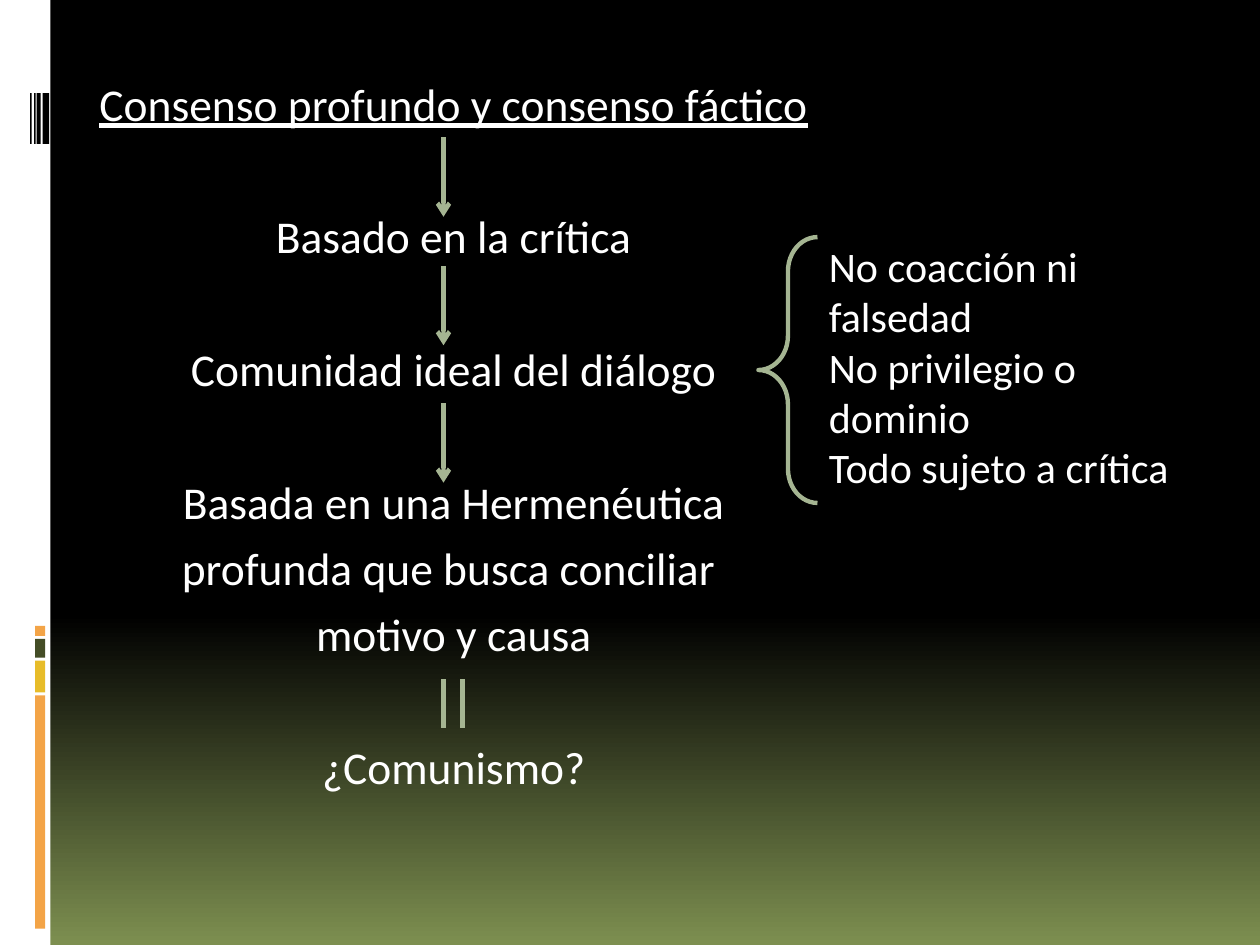
from lxml import etree
from pptx import Presentation
from pptx.dml.color import RGBColor
from pptx.enum.shapes import MSO_CONNECTOR, MSO_SHAPE
from pptx.enum.text import MSO_AUTO_SIZE, PP_ALIGN
from pptx.oxml.ns import qn
from pptx.util import Cm, Pt

RECT = MSO_SHAPE.RECTANGLE
BRACE = MSO_SHAPE.LEFT_BRACE
LINE = MSO_CONNECTOR.STRAIGHT
CENTER = PP_ALIGN.CENTER
LEFT = PP_ALIGN.LEFT
FIT = MSO_AUTO_SIZE.SHAPE_TO_FIT_TEXT
FIXED = MSO_AUTO_SIZE.NONE

HUES = {
    "white": "FFFFFF",
    "black": "000000",
    "olive": "7D8F50",
    "sage": "A5B592",
    "orange": "F3A447",
    "gold": "E7BC29",
    "moss": "444D26",
}


class Deck:
    font = "Calibri"
    width = Pt(2.5)

    def __init__(self):
        self.show = Presentation()
        self.show.slide_width, self.show.slide_height = Cm(25.4), Cm(19.05)
        self.slide = self.show.slides.add_slide(self.show.slide_layouts[6])

    def hue(self, name):
        return RGBColor.from_string(HUES[name])

    def fade(self, start, first, last):
        fill = self.slide.background.fill
        fill.gradient()
        fill.gradient_angle = 270
        for stop, place, name in zip(fill.gradient_stops, (start, 1), (first, last)):
            stop.position = place
            stop.color.rgb = self.hue(name)

    def bar(self, x, y, w, h, name):
        bar = self.slide.shapes.add_shape(RECT, Cm(x), Cm(y), Cm(w), Cm(h))
        bar.shadow.inherit = False
        bar.fill.solid()
        bar.fill.fore_color.rgb = self.hue(name)
        bar.line.fill.background()

    def brace(self, x, y, w, h, curve):
        brace = self.slide.shapes.add_shape(BRACE, Cm(x), Cm(y), Cm(w), Cm(h))
        brace.shadow.inherit = False
        brace.adjustments[0] = curve
        brace.fill.background()
        self.ink(brace.line)

    def ink(self, line):
        line.color.rgb = self.hue("sage")
        line.width = self.width

    def stem(self, x, y, h, arrow=False):
        stem = self.slide.shapes.add_connector(LINE, Cm(x), Cm(y), Cm(x), Cm(y + h))
        self.ink(stem.line)
        if arrow:
            tail = etree.SubElement(stem.line._get_or_add_ln(), qn("a:tailEnd"))
            tail.set("type", "arrow")
        etree.SubElement(stem._element.spPr, qn("a:effectLst"))

    def text(self, x, y, w, h, rows, size, align=LEFT, inset=0.25, fit=FIXED):
        box = self.slide.shapes.add_textbox(Cm(x), Cm(y), Cm(w), Cm(h))
        frame = box.text_frame
        frame.word_wrap = True
        frame.auto_size = fit
        frame.margin_left = Cm(inset)
        for i, (words, gap, under) in enumerate(rows):
            para = frame.add_paragraph() if i else frame.paragraphs[0]
            para.alignment = align
            para.space_before = Pt(gap)
            run = para.add_run()
            run.text = words
            run.font.name = self.font
            run.font.size = Pt(size)
            run.font.underline = under
            run.font.color.rgb = self.hue("white")


def main():
    deck = Deck()
    deck.fade(0.65, "black", "olive")

    deck.bar(0, 0, 1.02, 19.05, "white")
    top = 12.62
    for tall, name in ((0.2, "orange"), (0.38, "moss"), (0.64, "gold"), (4.7, "orange")):
        deck.bar(0.71, top, 0.2, tall, name)
        top += tall + 0.06
    for x, wide in ((0.61, 0.03), (0.69, 0.03), (0.74, 0.08), (0.86, 0.13)):
        deck.bar(x, 1.88, wide, 1.02, "black")

    near, far = 6.5, 44.7
    chain = [
        ("Consenso profundo y consenso fáctico", 0, True),
        ("Basado en la crítica", far, False),
        ("Comunidad ideal del diálogo", far, False),
        ("Basada en una Hermenéutica", far, False),
        ("profunda que busca conciliar ", near, False),
        ("motivo y causa", near, False),
        ("¿Comunismo?", far, False),
    ]
    deck.text(1.4, 1.4, 15.32, 16.87, chain, 26, CENTER, inset=0.43)

    rules = ["No coacción ni falsedad", "No privilegio o dominio", "Todo sujeto a crítica"]
    deck.text(16.46, 4.72, 7.75, 5.38, [(rule, 0, False) for rule in rules], 24, fit=FIT)
    deck.brace(15.29, 4.78, 1.19, 5.36, 0.58)

    for y in (2.77, 5.36, 8.13):
        deck.stem(8.94, y, 1.6, arrow=True)
    for x in (8.94, 9.32):
        deck.stem(x, 13.69, 0.99)

    deck.show.save("out.pptx")


if __name__ == "__main__":
    main()
